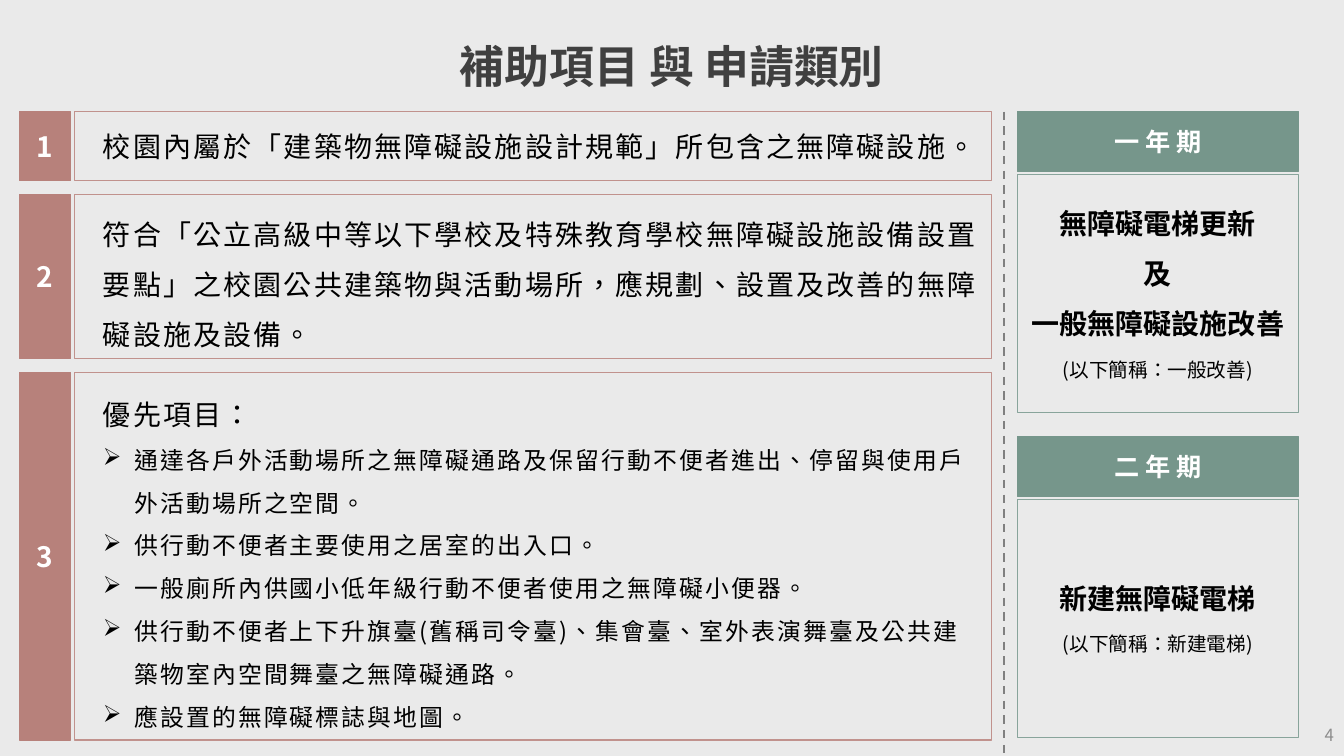
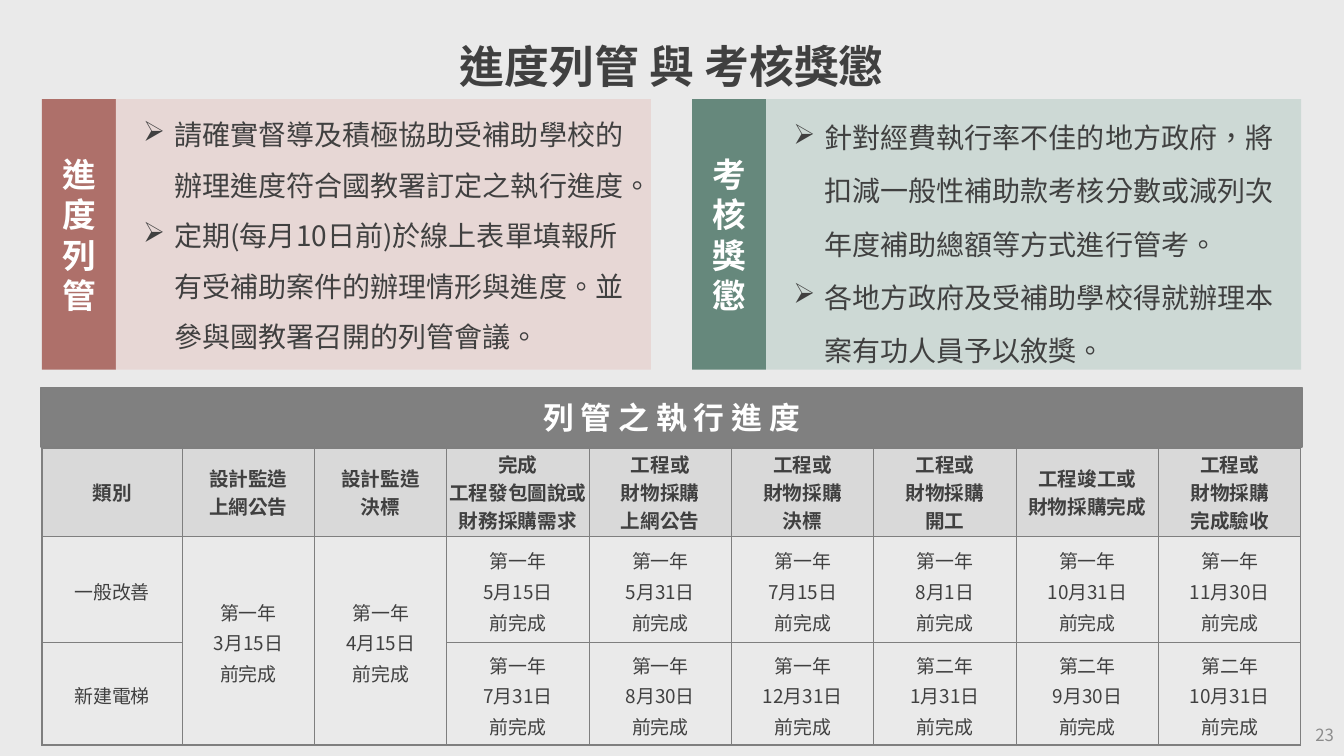
"""Build two slides on school access grants: items and terms, then progress and review."""
from lxml.etree import SubElement
from pptx import Presentation
from pptx.dml.color import RGBColor as RGB
from pptx.enum.dml import MSO_LINE
from pptx.enum.shapes import MSO_CONNECTOR as LINK, MSO_SHAPE as SHAPE
from pptx.enum.text import MSO_ANCHOR as ANCHOR, MSO_AUTO_SIZE as FIT, PP_ALIGN as ALIGN
from pptx.oxml import parse_xml
from pptx.oxml.ns import nsdecls, qn
from pptx.util import Inches, Pt

PAPER = RGB(0xEA, 0xEA, 0xEA)
WHITE = RGB(0xFF, 0xFF, 0xFF)
BLACK = RGB(0, 0, 0)
INK = RGB(0x40, 0x40, 0x40)
FAINT = RGB(0x8C, 0x8C, 0x8C)
GREY = RGB(0x80, 0x80, 0x80)
RULE = RGB(0x7F, 0x7F, 0x7F)
HEAD = RGB(0xD9, 0xD9, 0xD9)
ROSE = RGB(0xB7, 0x81, 0x7B)
ROSE_EDGE = RGB(0xC1, 0x92, 0x8D)
ROSE_DEEP = RGB(0xAE, 0x70, 0x6A)
ROSE_PALE = RGB(0xE7, 0xD7, 0xD5)
SAGE = RGB(0x76, 0x96, 0x8B)
SAGE_EDGE = RGB(0x88, 0xA4, 0x9B)
SAGE_DEEP = RGB(0x66, 0x88, 0x7C)
SAGE_PALE = RGB(0xCD, 0xD9, 0xD5)
FONT = "Noto Sans CJK SC"
COLS, ROWS = 160, 90


class Deck:
    """Hold the shared style and the current slide on a grid of 160 by 90 cells."""

    def __init__(self):
        self.show = Presentation()
        self.show.slide_width = Inches(13.33)
        self.show.slide_height = Inches(7.5)
        back = self.show.slide_master.background.fill
        back.solid()
        back.fore_color.rgb = PAPER
        self.page = None

    def across(self, cols):
        return round(self.show.slide_width * cols / COLS)

    def down(self, rows):
        return round(self.show.slide_height * rows / ROWS)

    def place(self, x, y, w, h):
        return self.across(x), self.down(y), self.across(w), self.down(h)

    def start(self, title, number):
        """Add a slide with its title and page number."""
        self.page = self.show.slides.add_slide(self.show.slide_layouts[5])
        head = self.page.shapes.title
        head.left, head.top, head.width, head.height = self.place(0, 3.6, COLS, 8.2)
        self.put_text(head.text_frame, [title], anchor=ANCHOR.TOP, size=32, bold=True,
                      color=INK, lead=41)
        note = self.page.shapes.add_textbox(*self.place(124, 85.1, 36, 4.8))
        self.put_text(note.text_frame, [str(number)], size=12, color=FAINT, align=ALIGN.RIGHT)

    def put_text(self, frame, lines, anchor=ANCHOR.MIDDLE, inset=(0.1, 0.05), **look):
        """Fill a text frame; a line is a text or a pair of text and own look."""
        frame.word_wrap = True
        frame.auto_size = FIT.NONE
        frame.vertical_anchor = anchor
        frame.margin_left = frame.margin_right = Inches(inset[0])
        frame.margin_top = frame.margin_bottom = Inches(inset[1])
        self.set_lines(frame, lines, look)

    def set_lines(self, frame, lines, look):
        for i, line in enumerate(lines):
            text, own = (line, {}) if isinstance(line, str) else line
            para = frame.add_paragraph() if i else frame.paragraphs[0]
            para.text = text
            self.style(para, **{**look, **own})

    def style(self, para, size, color, bold=False, align=ALIGN.CENTER, lead=None,
              after=0, track=0, left=0, hang=0):
        """Format one paragraph; a hang adds an arrow bullet."""
        para.alignment = align
        para.space_after = Pt(after)
        if lead:
            para.line_spacing = Pt(lead)
        props = para._p.get_or_add_pPr()
        props.set("marL", str(Inches(left)))
        props.set("indent", str(-Inches(hang)))
        if hang:
            SubElement(props, qn("a:buChar")).set("char", "➢")
        font = para.font
        font.size, font.bold, font.name = Pt(size), bold, FONT
        font.color.rgb = color
        base = props.find(qn("a:defRPr"))
        base.set("lang", "zh-TW")
        base.set("spc", str(round(track * 100)))
        SubElement(base, qn("a:ea")).set("typeface", FONT)

    def box(self, spot, lines, fill=None, edge=None, width=0.75, **look):
        """Add a rectangle with text."""
        shape = self.page.shapes.add_shape(SHAPE.RECTANGLE, *self.place(*spot))
        shape.shadow.inherit = False
        self.paint(shape.fill, fill)
        self.paint(shape.line.fill, edge)
        if edge is not None:
            shape.line.width = Pt(width)
        self.put_text(shape.text_frame, lines, **look)

    def paint(self, fill, color):
        if color is None:
            fill.background()
        else:
            fill.solid()
            fill.fore_color.rgb = color

    def dash(self, x, top, end):
        """Add a dashed upright line."""
        line = self.page.shapes.add_connector(
            LINK.STRAIGHT, self.across(x), self.down(top), self.across(x), self.down(end))
        line.line.color.rgb = GREY
        line.line.width = Pt(1.5)
        line.line.dash_style = MSO_LINE.DASH
        SubElement(line._element.spPr, qn("a:effectLst"))

    def table(self, x, y, wide, high, cells, spans):
        """Add a ruled table whose first row is the head."""
        spot = self.place(x, y, sum(wide), sum(high))
        grid = self.page.shapes.add_table(len(high), len(wide), *spot).table
        grid.first_row = grid.horz_banding = False
        for col, w in zip(grid.columns, wide):
            col.width = self.across(w)
        for row, h in zip(grid.rows, high):
            row.height = self.down(h)
        for r, texts in enumerate(cells):
            look = (dict(size=13.5, lead=22) if r else dict(size=14, lead=20, bold=True))
            for c, text in enumerate(texts):
                cell = grid.cell(r, c)
                self.paint(cell.fill, None if r else HEAD)
                self.frame(cell)
                if text:
                    self.set_lines(cell.text_frame, text.split("\n"), dict(look, color=INK))
        for c in spans:
            grid.cell(1, c).merge(grid.cell(2, c))

    def frame(self, cell):
        cell.vertical_anchor = ANCHOR.MIDDLE
        cell.margin_left = cell.margin_right = Inches(0.02)
        cell.margin_top = cell.margin_bottom = 0
        props = cell._tc.get_or_add_tcPr()
        for i, side in enumerate("LRTB"):
            props.insert(i, parse_xml(
                f'<a:ln{side} {nsdecls("a")} w="{Pt(1)}"><a:solidFill>'
                f'<a:srgbClr val="{RULE}"/></a:solidFill></a:ln{side}>'))


def items(deck):
    """Draw the grant items and the two terms."""
    deck.start("補助項目 與 申請類別", 4)
    point = dict(size=17, lead=30.6, left=0.51, hang=0.31)
    goals = ["通達各戶外活動場所之無障礙通路及保留行動不便者進出、停留與使用戶外活動場所之空間。",
             "供行動不便者主要使用之居室的出入口。",
             "一般廁所內供國小低年級行動不便者使用之無障礙小便器。",
             "供行動不便者上下升旗臺(舊稱司令臺)、集會臺、室外表演舞臺及公共建築物室內空間舞臺之無障礙通路。",
             "應設置的無障礙標誌與地圖。"]
    rows = [(8.2, None, ["校園內屬於「建築物無障礙設施設計規範」所包含之無障礙設施。"]),
            (19.6, 35.7, ["符合「公立高級中等以下學校及特殊教育學校無障礙設施設備設置要點」"
                          "之校園公共建築物與活動場所，應規劃、設置及改善的無障礙設施及設備。"]),
            (43.8, 35.7, ["優先項目："] + [(goal, point) for goal in goals])]
    top = y = 13.3
    for n, (high, lead, lines) in enumerate(rows, 1):
        deck.box((2.3, y, 6.1, high), [str(n)], fill=ROSE, edge=ROSE, inset=(0, 0),
                 size=20, bold=True, color=WHITE, track=1.5)
        deck.box((8.9, y, 109.1, high), lines, edge=ROSE_EDGE, inset=(0.08, 0.08), size=20,
                 color=BLACK, align=ALIGN.LEFT, lead=lead, track=1.5, left=0.2)
        y += high + 1.6
    deck.dash(119.5, top, ROWS)
    small = dict(size=14, bold=False, lead=17, after=0)
    terms = [("一 年 期", ["無障礙電梯更新", "及", "一般無障礙設施改善", ("(以下簡稱：一般改善)", small)]),
             ("二 年 期", ["新建無障礙電梯", ("(以下簡稱：新建電梯)", small)])]
    for i, (term, lines) in enumerate(terms):
        y = top + i * 38.7
        deck.box((121.1, y, 33.5, 7.1), [term], fill=SAGE, edge=SAGE,
                 size=18, bold=True, color=WHITE)
        deck.box((121.1, y + 7.5, 33.5, 28.3), lines, edge=SAGE_EDGE,
                 size=20, bold=True, color=BLACK, lead=24, after=12)


def due(date, year="一"):
    return f"第{year}年\n{date}\n前完成"


def review(deck):
    """Draw the two panels and the schedule."""
    deck.start("進度列管 與 考核獎懲", 23)
    panels = [("進度列管", ROSE_DEEP, ROSE_PALE, 36,
               ["請確實督導及積極協助受補助學校的辦理進度符合國教署訂定之執行進度。",
                "定期(每月10日前)於線上表單填報所有受補助案件的辦理情形與進度。並參與國教署召開的列管會議。"]),
              ("考核獎懲", SAGE_DEEP, SAGE_PALE, 38,
               ["針對經費執行率不佳的地方政府，將扣減一般性補助款考核分數或減列次年度補助總額等方式進行管考。",
                "各地方政府及受補助學校得就辦理本案有功人員予以敘獎。"])]
    for i, (name, deep, pale, lead, lines) in enumerate(panels):
        x = 5 + i * 77.4
        deck.box((x, 11.8, 8.8, 32.2), [name], fill=deep, size=24, bold=True,
                 color=WHITE, lead=29)
        deck.box((x + 8.8, 11.8, 63.7, 32.2), lines, fill=pale, anchor=ANCHOR.TOP,
                 inset=(0.2, 0.02), size=20, color=INK, align=ALIGN.LEFT, lead=lead,
                 left=0.38, hang=0.31)
    deck.box((4.9, 46.1, 150.1, 7.1), ["列 管 之 執 行 進 度"], fill=GREY, edge=RULE, width=1,
             size=22, bold=True, color=WHITE)
    buy = "工程或\n財物採購\n"
    heads = ["類別", "設計監造\n上網公告", "設計監造\n決標", "完成\n工程發包圖說或\n財務採購需求",
             buy + "上網公告", buy + "決標", buy + "開工", "工程竣工或\n財物採購完成", buy + "完成驗收"]
    first = [due(date) for date in ("3月15日", "4月15日", "5月15日", "5月31日", "7月15日",
                                    "8月1日", "10月31日", "11月30日")]
    later = [due(date) for date in ("7月31日", "8月30日", "12月31日")]
    later += [due(date, "二") for date in ("1月31日", "9月30日", "10月31日")]
    deck.table(5, 53.4, [16.7] + [15.75] * 2 + [16.95] * 6, [10.5, 12.6, 12.2],
               [heads, ["一般改善"] + first, ["新建電梯", "", ""] + later], spans=(1, 2))


def main():
    deck = Deck()
    items(deck)
    review(deck)
    deck.show.save("out.pptx")


if __name__ == "__main__":
    main()
